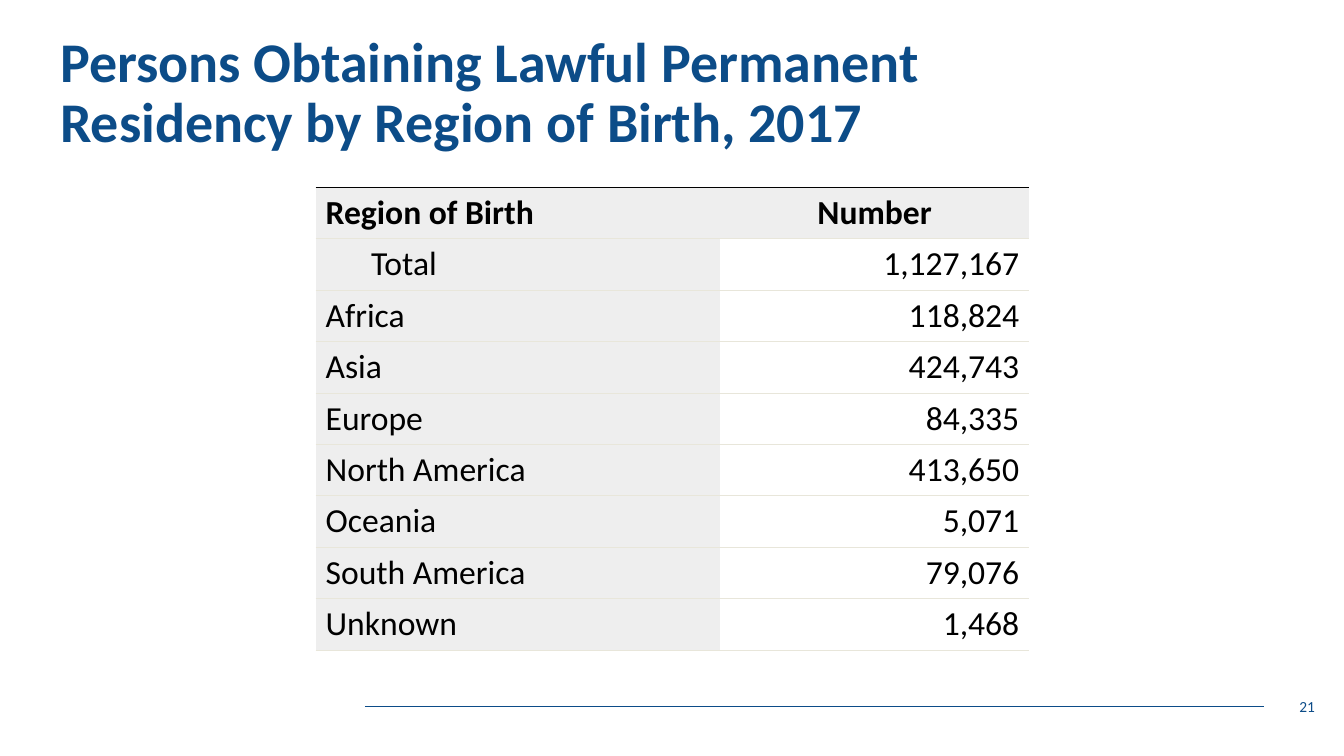
from lxml.etree import SubElement
from pptx import Presentation
from pptx.dml.color import RGBColor
from pptx.enum.shapes import MSO_CONNECTOR
from pptx.enum.text import MSO_ANCHOR, PP_ALIGN
from pptx.oxml.ns import qn
from pptx.util import Inches, Pt

NAVY, BLACK, WHITE = "0C4C88", "000000", "FFFFFF"
SHADE, RULE = "EEEEEE", "E8E6DA"

REGIONS = [
    ("Region of Birth", "Number"),
    ("Total", "1,127,167"),
    ("Africa", "118,824"),
    ("Asia", "424,743"),
    ("Europe", "84,335"),
    ("North America", "413,650"),
    ("Oceania", "5,071"),
    ("South America", "79,076"),
    ("Unknown", "1,468"),
]


def color(hex_value):
    return RGBColor.from_string(hex_value)


class SlideBuilder:
    font_name = "Calibri"

    def __init__(self, slide):
        self.slide = slide

    def fill_paragraph(self, paragraph, text, hex_value, align=PP_ALIGN.LEFT,
                       **font_format):
        paragraph.text = text
        paragraph.alignment = align
        font = paragraph.font
        for name, value in {"name": self.font_name, **font_format}.items():
            setattr(font, name, value)
        font.color.rgb = color(hex_value)

    def text(self, box, text, line_spacing=1.0, **style):
        shape = self.slide.shapes.add_textbox(*map(Inches, box))
        frame = shape.text_frame
        frame.word_wrap = True
        frame.vertical_anchor = MSO_ANCHOR.MIDDLE
        paragraph = frame.paragraphs[0]
        paragraph.line_spacing = line_spacing
        self.fill_paragraph(paragraph, text, **style)

    def line(self, start, end, hex_value, width):
        connector = self.slide.shapes.add_connector(
            MSO_CONNECTOR.STRAIGHT, *map(Inches, start + end))
        connector.line.color.rgb = color(hex_value)
        connector.line.width = Pt(width)
        SubElement(connector._element.spPr, qn("a:effectLst"))

    def cell_borders(self, cell, top, bottom):
        properties = cell._tc.get_or_add_tcPr()
        for side, hex_value in (("L", None), ("R", None), ("T", top), ("B", bottom)):
            border = SubElement(properties, qn(f"a:ln{side}"), w=str(Pt(0.75)))
            if hex_value:
                fill = SubElement(border, qn("a:solidFill"))
                SubElement(fill, qn("a:srgbClr"), val=hex_value)
            else:
                SubElement(border, qn("a:noFill"))

    def table(self, left, top, widths, row_height, rows):
        table = self.slide.shapes.add_table(
            len(rows), len(widths), Inches(left), Inches(top),
            Inches(sum(widths)), Inches(row_height * len(rows))).table
        for column, width in zip(table.columns, widths):
            column.width = Inches(width)
        for row_index, values in enumerate(rows):
            table.rows[row_index].height = Inches(row_height)
            header = row_index == 0
            for column_index, value in enumerate(values):
                cell = table.cell(row_index, column_index)
                label = column_index == 0
                cell.vertical_anchor = MSO_ANCHOR.MIDDLE
                self.cell_borders(cell, BLACK if header else RULE, RULE)
                cell.fill.solid()
                cell.fill.fore_color.rgb = color(SHADE if header or label else WHITE)
                paragraph = cell.text_frame.paragraphs[0]
                if value == "Total":
                    paragraph._p.get_or_add_pPr().set("marL", str(Inches(0.45)))
                number_align = PP_ALIGN.CENTER if header else PP_ALIGN.RIGHT
                self.fill_paragraph(paragraph, value, BLACK,
                                    PP_ALIGN.LEFT if label else number_align,
                                    size=Pt(24), bold=header)


def main():
    presentation = Presentation()
    presentation.slide_width = Inches(13.33)
    presentation.slide_height = Inches(7.5)
    slide = presentation.slides.add_slide(presentation.slide_layouts[6])
    builder = SlideBuilder(slide)

    # Footer rule
    builder.line((3.62, 7.01), (12.54, 7.01), NAVY, 0.5)

    # Title and page number
    builder.text((0.5, 0.21, 11.03, 1.45),
                 "Persons Obtaining Lawful Permanent Residency by Region of Birth, 2017",
                 line_spacing=0.9, hex_value=NAVY, size=Pt(40), bold=True)
    builder.text((10.14, 6.81, 3, 0.4), "21",
                 hex_value=NAVY, align=PP_ALIGN.RIGHT, size=Pt(11))

    # Residency by region
    builder.table(3.13, 1.86, (4.01, 3.07), 0.51, REGIONS)

    presentation.save("out.pptx")


if __name__ == "__main__":
    main()
